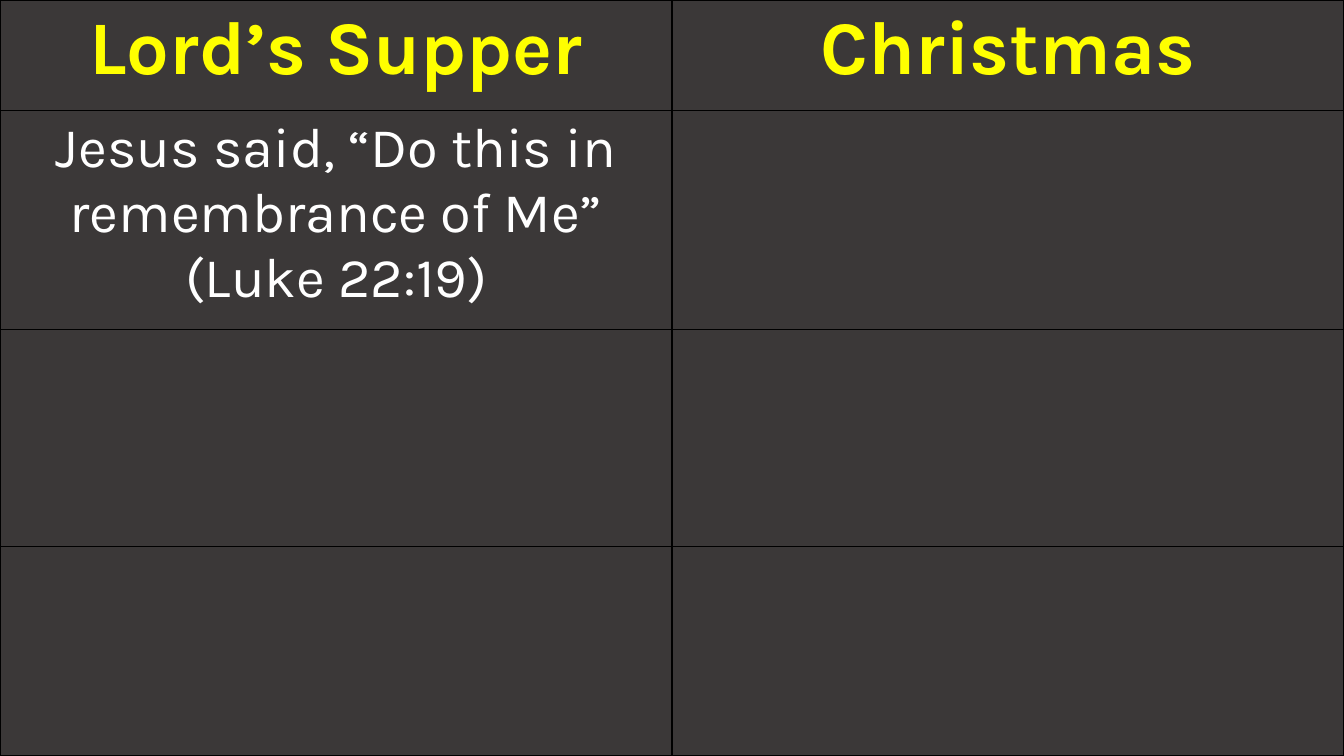
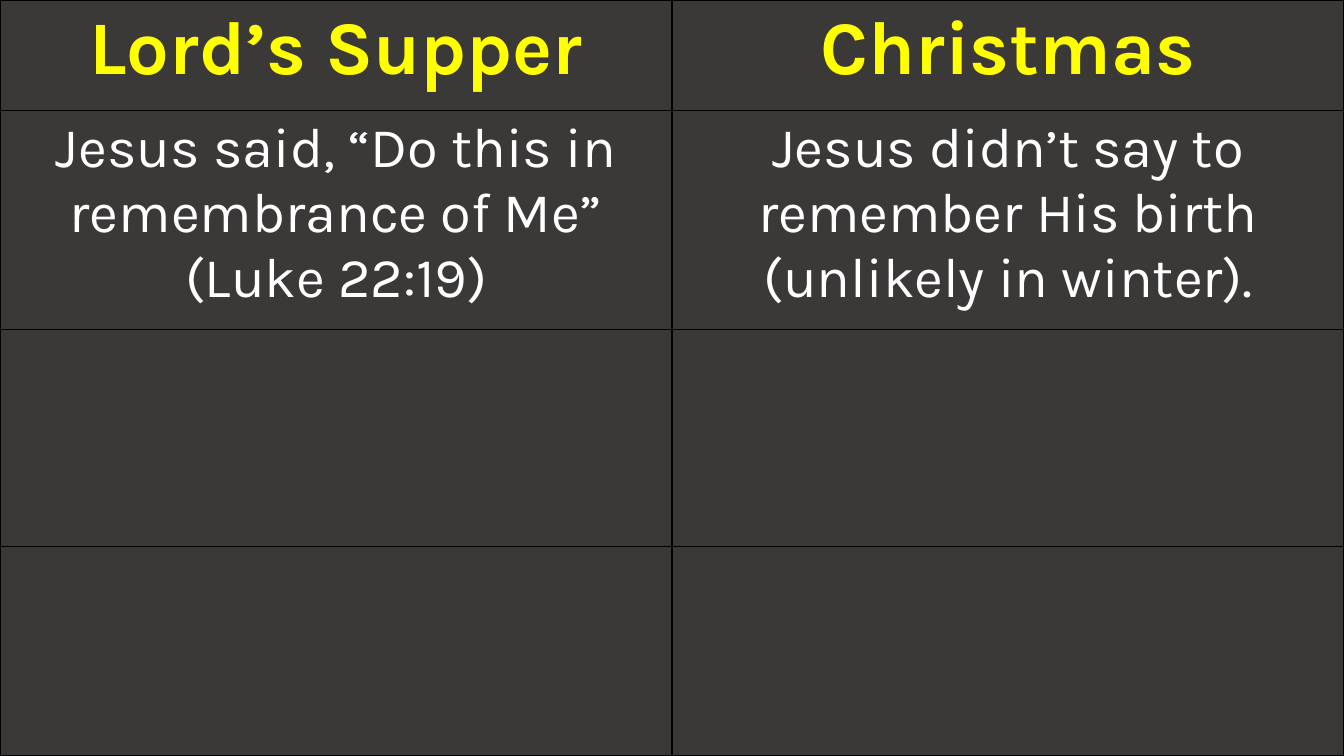
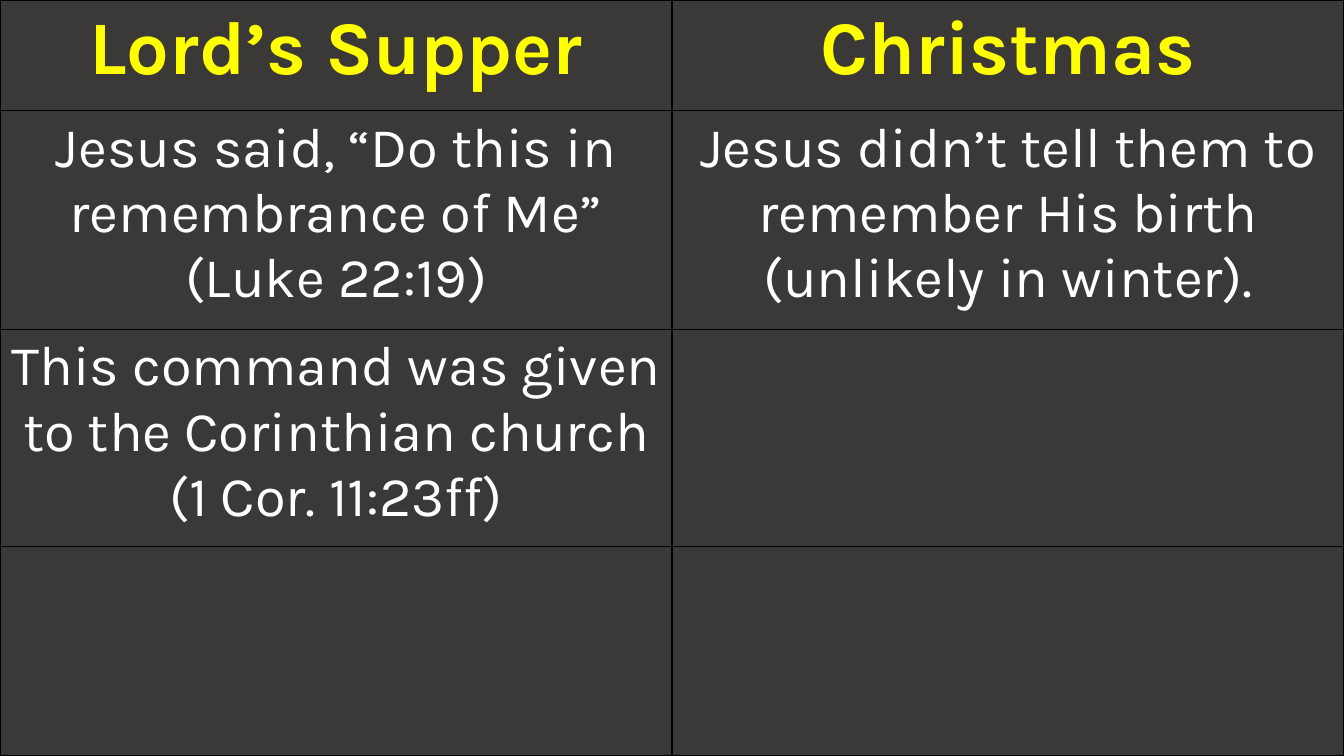
from lxml import etree
from pptx import Presentation
from pptx.dml.color import RGBColor
from pptx.enum import text
from pptx.oxml import ns
from pptx.util import Pt

BLACK = RGBColor(0x00, 0x00, 0x00)
CHARCOAL = RGBColor(0x3B, 0x38, 0x38)
YELLOW = RGBColor(0xFF, 0xFF, 0x00)
WHITE = RGBColor(0xFF, 0xFF, 0xFF)

SLIDE_WIDTH, SLIDE_HEIGHT = Pt(960), Pt(540)
ROW_HEIGHTS = [Pt(79.2), Pt(156.2), Pt(154.8), Pt(149.8)]
BORDER_WIDTH = Pt(1)
BLANK_LAYOUT = 6

HEADING = {"name": "Karla", "size": Pt(54), "bold": True}
BODY = {"name": "Karla", "size": Pt(40), "bold": False}

HEADINGS = ("Lord’s Supper", "Christmas")
REMEMBRANCE = "Jesus said, “Do this in remembrance of Me” (Luke 22:19)"
CORINTH = "This command was given to the Corinthian church (1 Cor. 11:23ff)"

COMPARISONS = [
    [(REMEMBRANCE, "")],
    [(REMEMBRANCE, "Jesus didn’t say to remember His birth (unlikely in winter).")],
    [
        (REMEMBRANCE, "Jesus didn’t tell them to remember His birth (unlikely in winter)."),
        (CORINTH, ""),
    ],
]


def set_borders(cell):
    properties = cell._tc.get_or_add_tcPr()
    for position, side in enumerate(("lnL", "lnR", "lnT", "lnB")):
        line = etree.Element(ns.qn(f"a:{side}"), w=str(BORDER_WIDTH))
        fill = etree.SubElement(line, ns.qn("a:solidFill"))
        etree.SubElement(fill, ns.qn("a:srgbClr"), val=str(BLACK))
        properties.insert(position, line)


def write_cell(cell, words, font_format, color):
    paragraph = cell.text_frame.paragraphs[0]
    paragraph.alignment = text.PP_ALIGN.CENTER
    run = paragraph.add_run()
    run.text = words
    for attribute, value in font_format.items():
        setattr(run.font, attribute, value)
    run.font.color.rgb = color


def add_comparison(slide, rows):
    """Fill the slide with a two-column table; rows not given stay empty."""
    table = slide.shapes.add_table(
        len(ROW_HEIGHTS), len(HEADINGS), 0, 0, SLIDE_WIDTH, SLIDE_HEIGHT
    ).table
    for row, height in zip(table.rows, ROW_HEIGHTS):
        row.height = height
    for cell in table.iter_cells():
        cell.fill.solid()
        cell.fill.fore_color.rgb = CHARCOAL
        set_borders(cell)
    for row_index, row_words in enumerate([HEADINGS, *rows]):
        font_format, color = (BODY, WHITE) if row_index else (HEADING, YELLOW)
        for column_index, words in enumerate(row_words):
            if words:
                write_cell(table.cell(row_index, column_index), words, font_format, color)


def main():
    presentation = Presentation()
    presentation.slide_width, presentation.slide_height = SLIDE_WIDTH, SLIDE_HEIGHT
    background = presentation.slide_master.background.fill
    background.solid()
    background.fore_color.rgb = BLACK
    for rows in COMPARISONS:
        slide = presentation.slides.add_slide(presentation.slide_layouts[BLANK_LAYOUT])
        add_comparison(slide, rows)
    presentation.save("out.pptx")


if __name__ == "__main__":
    main()
